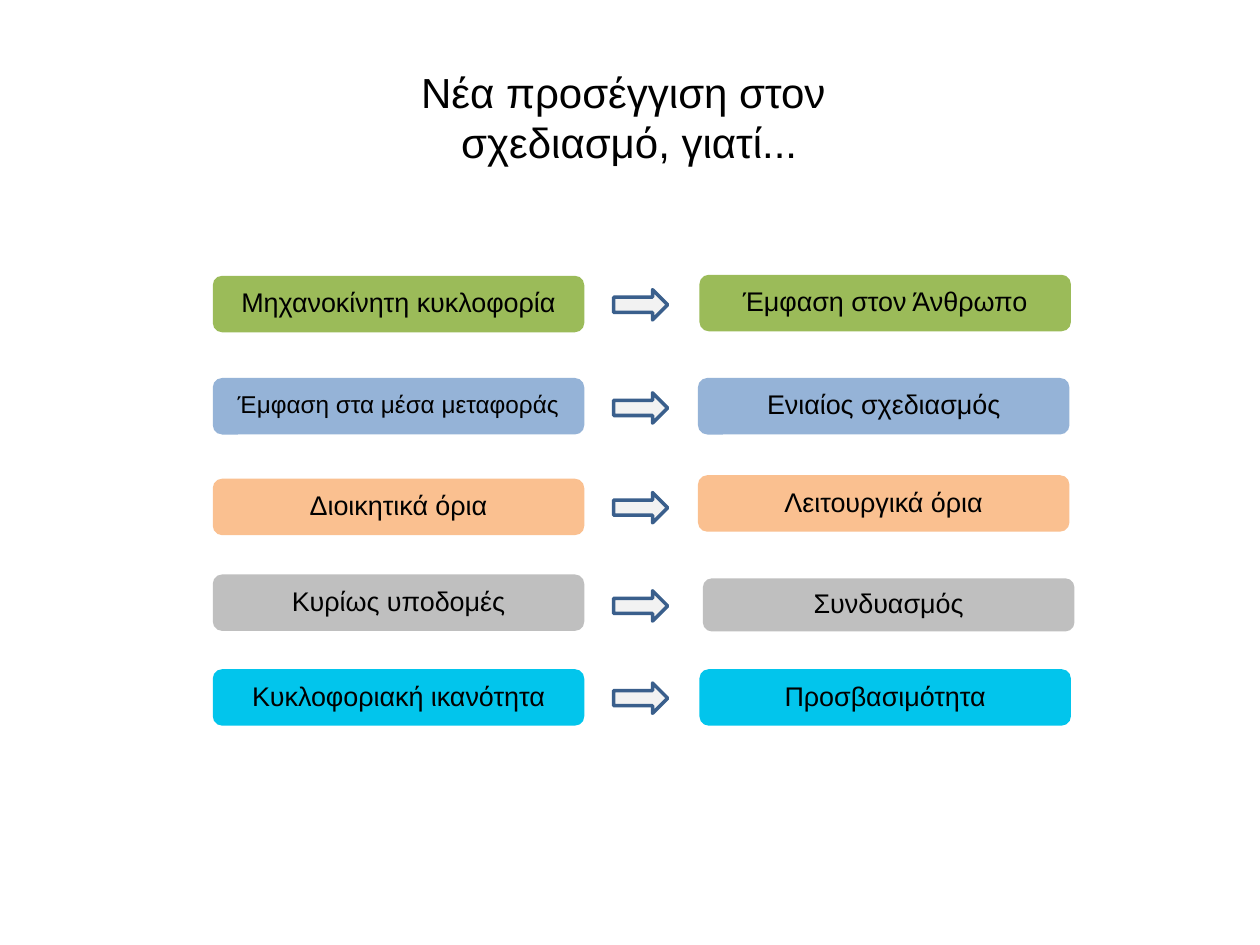
import dataclasses

import pptx
import pptx.dml.color
import pptx.enum.shapes
import pptx.enum.text
import pptx.util

Cm = pptx.util.Cm
Pt = pptx.util.Pt
SHAPE = pptx.enum.shapes.MSO_SHAPE


@dataclasses.dataclass(frozen=True)
class Theme:
    font: str = "Arial"
    text: str = "000000"
    green: str = "9BBB59"
    blue: str = "95B3D7"
    orange: str = "FAC090"
    grey: str = "BFBFBF"
    cyan: str = "02C5EC"
    arrow_fill: str = "F2F2F2"
    arrow_line: str = "3A5F8C"
    title_size: float = 24
    label_size: float = 15.4
    long_label_size: float = 13.9


class SlideBuilder:
    """Draws the title, labels and arrows of one slide in a shared theme."""

    def __init__(self, prs, theme):
        self.theme = theme
        self.s = prs.slides.add_slide(prs.slide_layouts[6])

    def color(self, value):
        return pptx.dml.color.RGBColor.from_string(value)

    def add_text(self, sp, lines, size, spacing=1.0):
        tf = sp.text_frame
        tf.word_wrap = True
        tf.vertical_anchor = pptx.enum.text.MSO_ANCHOR.MIDDLE
        p = tf.paragraphs[0]
        p.alignment = pptx.enum.text.PP_ALIGN.CENTER
        p.line_spacing = spacing
        for i, line in enumerate(lines):
            if i:
                p.add_line_break()
            r = p.add_run()
            r.text = line
            r.font.name = self.theme.font
            r.font.size = Pt(size)
            r.font.color.rgb = self.color(self.theme.text)

    def shape(self, kind, left, top, width, height, fill):
        sp = self.s.shapes.add_shape(kind, Cm(left), Cm(top), Cm(width), Cm(height))
        sp.shadow.inherit = False
        sp.fill.solid()
        sp.fill.fore_color.rgb = self.color(fill)
        return sp

    def title(self, lines, left, top, width, height):
        sp = self.s.shapes.add_textbox(Cm(left), Cm(top), Cm(width), Cm(height))
        self.add_text(sp, lines, self.theme.title_size)

    def label(self, text, left, top, fill, height=1.14, size=None, spacing=0.9):
        sp = self.shape(SHAPE.ROUNDED_RECTANGLE, left, top, 7.49, height, fill)
        sp.line.fill.background()
        tf = sp.text_frame
        tf.margin_left = tf.margin_right = Cm(0.15)
        tf.margin_top = tf.margin_bottom = Cm(0.1)
        self.add_text(sp, [text], size or self.theme.label_size, spacing)

    def arrow(self, left, top):
        sp = self.shape(SHAPE.RIGHT_ARROW, left, top, 1.09, 0.61, self.theme.arrow_fill)
        sp.line.color.rgb = self.color(self.theme.arrow_line)
        sp.line.width = Pt(2)


def main():
    theme = Theme()
    prs = pptx.Presentation()
    prs.slide_width, prs.slide_height = Cm(25.4), Cm(19.05)
    slide = SlideBuilder(prs, theme)
    slide.title(["Νέα προσέγγιση στον ", "σχεδιασμό, γιατί..."], 3.07, 1.32, 19.23, 2.06)

    long_label = {"size": theme.long_label_size, "spacing": 0.8}
    rows = [
        (theme.green, "Μηχανοκίνητη κυκλοφορία", 5.56, {}, 5.84,
         "Έμφαση στον Άνθρωπο", 14.1, 5.54, {}),
        (theme.blue, "Έμφαση στα μέσα μεταφοράς", 7.62, long_label, 7.92,
         "Ενιαίος σχεδιασμός", 14.07, 7.62, {}),
        (theme.orange, "Διοικητικά όρια", 9.65, {}, 9.93,
         "Λειτουργικά όρια", 14.07, 9.58, {}),
        (theme.grey, "Κυρίως υποδομές", 11.58, {}, 11.91,
         "Συνδυασμός", 14.17, 11.66, {"height": 1.07}),
        (theme.cyan, "Κυκλοφοριακή ικανότητα", 13.49, {}, 13.77,
         "Προσβασιμότητα", 14.1, 13.49, {}),
    ]
    for fill, old, old_top, old_style, arrow_top, new, new_left, new_top, new_style in rows:
        slide.label(old, 4.29, old_top, fill, **old_style)
        slide.arrow(12.37, arrow_top)
        slide.label(new, new_left, new_top, fill, **new_style)

    prs.save("out.pptx")


if __name__ == "__main__":
    main()
